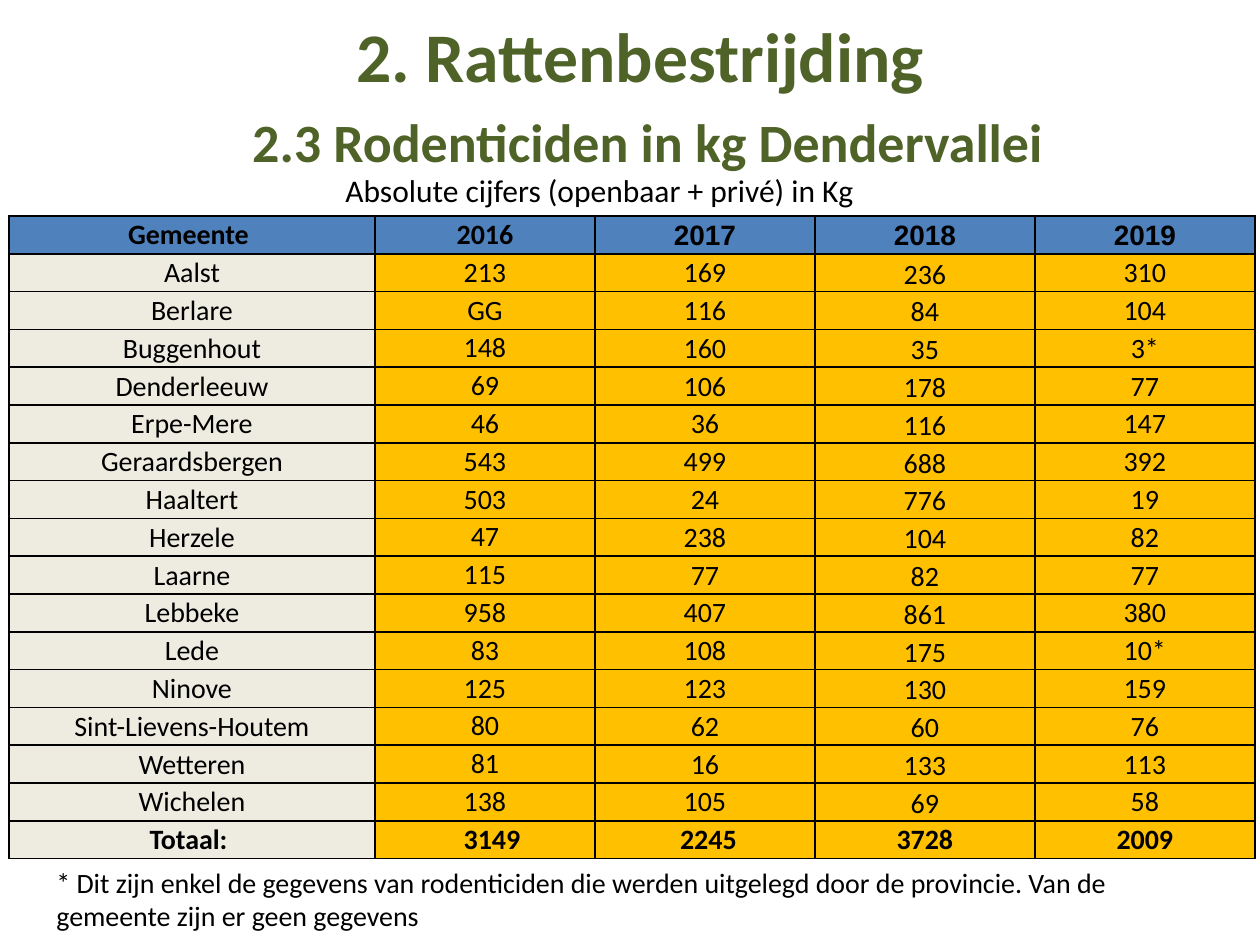
import pptx
import pptx.util
import pptx.dml.color
import pptx.enum.text
import pptx.oxml
import pptx.oxml.ns

TITLE = "2. Rattenbestrijding"
SUBTITLE = "2.3 Rodenticiden in kg Dendervallei"
CAPTION = "Absolute cijfers (openbaar + privé) in Kg"
FOOTNOTE = ("* Dit zijn enkel de gegevens van rodenticiden die werden uitgelegd "
            "door de provincie. Van de gemeente zijn er geen gegevens")
ROWS = [
    ("Gemeente", "2016", "2017", "2018", "2019"),
    ("Aalst", "213", "169", "236", "310"),
    ("Berlare", "GG", "116", "84", "104"),
    ("Buggenhout", "148", "160", "35", "3*"),
    ("Denderleeuw", "69", "106", "178", "77"),
    ("Erpe-Mere", "46", "36", "116", "147"),
    ("Geraardsbergen", "543", "499", "688", "392"),
    ("Haaltert", "503", "24", "776", "19"),
    ("Herzele", "47", "238", "104", "82"),
    ("Laarne", "115", "77", "82", "77"),
    ("Lebbeke", "958", "407", "861", "380"),
    ("Lede", "83", "108", "175", "10*"),
    ("Ninove", "125", "123", "130", "159"),
    ("Sint-Lievens-Houtem", "80", "62", "60", "76"),
    ("Wetteren", "81", "16", "133", "113"),
    ("Wichelen", "138", "105", "69", "58"),
    ("Totaal:", "3149", "2245", "3728", "2009"),
]
LAST = len(ROWS) - 1
# (row, column): (left, right) cell margin in px where the text sits off centre
OFFSETS = {(0, 0): (1, 8), (LAST, 0): (1, 8), (LAST, 1): (15, 1), (LAST, 2): (8, 1)}

THEME = {
    "font": "Calibri", "year_font": "Arial",
    "title": "4F6228", "text": "000000", "border": "000000",
    "header": "4F81BD", "name": "EEECE1", "value": "FFC000",
    "title_pt": 39.8, "subtitle_pt": 30.8, "caption_pt": 18, "body_pt": 16,
}
PX = 914400 / 126
TABLE_BOX = (9, 216, 1246, 643)
COLUMNS = (366, 220, 220, 220, 220)

ALIGN = pptx.enum.text.PP_ALIGN
ANCHOR = pptx.enum.text.MSO_ANCHOR


def px(n):
    return pptx.util.Emu(round(n * PX))


def rgb(key):
    return pptx.dml.color.RGBColor.from_string(THEME[key])


def add_run(p, text, size, color="text", bold=False, font="font"):
    r = p.add_run()
    r.text = text
    r.font.name = THEME[font]
    r.font.size = pptx.util.Pt(THEME[size])
    r.font.bold = bold
    r.font.color.rgb = rgb(color)


def add_title(s):
    sp = s.shapes.title
    sp.left, sp.top, sp.width, sp.height = map(px, (63, 13, 1155, 200))
    tf = sp.text_frame
    tf.word_wrap = True
    tf.auto_size = pptx.enum.text.MSO_AUTO_SIZE.NONE
    tf.vertical_anchor = ANCHOR.TOP
    tf.margin_top = 0
    p = tf.paragraphs[0]
    p.alignment = ALIGN.CENTER
    add_run(p, TITLE, "title_pt", "title", True)
    p = tf.add_paragraph()
    p.alignment = ALIGN.CENTER
    p.space_before = pptx.util.Pt(7)
    p._p.get_or_add_pPr().set("marL", str(px(15)))
    add_run(p, SUBTITLE, "subtitle_pt", "title", True)


def add_text(s, box, text, size):
    tf = s.shapes.add_textbox(*map(px, box)).text_frame
    tf.word_wrap = True
    add_run(tf.paragraphs[0], text, size)


def set_borders(cell):
    tcPr = cell._tc.get_or_add_tcPr()
    for i, side in enumerate(("lnL", "lnR", "lnT", "lnB")):
        tcPr.insert(i, pptx.oxml.parse_xml(
            f'<a:{side} {pptx.oxml.ns.nsdecls("a")} w="12700"><a:solidFill>'
            f'<a:srgbClr val="{THEME["border"]}"/></a:solidFill></a:{side}>'))


def fill_cell(cell, row, col, text):
    header, body = row == 0, 0 < row < LAST
    left, right = OFFSETS.get((row, col), (1, 1))
    cell.margin_left, cell.margin_right = px(left), px(right)
    cell.margin_top, cell.margin_bottom = px(1), 0
    if body and col == 1:
        cell.margin_left = cell.margin_right = cell.margin_top = 0
    cell.vertical_anchor = ANCHOR.BOTTOM if body and col == 3 else ANCHOR.MIDDLE
    cell.fill.solid()
    cell.fill.fore_color.rgb = rgb("header" if header else "value" if col else "name")
    p = cell.text_frame.paragraphs[0]
    p.alignment = ALIGN.CENTER
    add_run(p, text, "body_pt", bold=not body,
            font="year_font" if header and col > 1 else "font")
    set_borders(cell)


def add_rodenticide_table(s):
    table = s.shapes.add_table(len(ROWS), len(COLUMNS), *map(px, TABLE_BOX)).table
    for column, width in zip(table.columns, COLUMNS):
        column.width = px(width)
    for i, values in enumerate(ROWS):
        table.rows[i].height = px(TABLE_BOX[3] / len(ROWS))
        for j, text in enumerate(values):
            fill_cell(table.cell(i, j), i, j, text)


def main():
    prs = pptx.Presentation()
    prs.slide_width, prs.slide_height = px(1260), px(945)
    s = prs.slides.add_slide(prs.slide_layouts[5])
    add_title(s)
    add_rodenticide_table(s)
    add_text(s, (333, 165, 735, 50), CAPTION, "caption_pt")
    add_text(s, (44, 859, 1171, 81), FOOTNOTE, "body_pt")
    prs.save("out.pptx")


if __name__ == "__main__":
    main()
